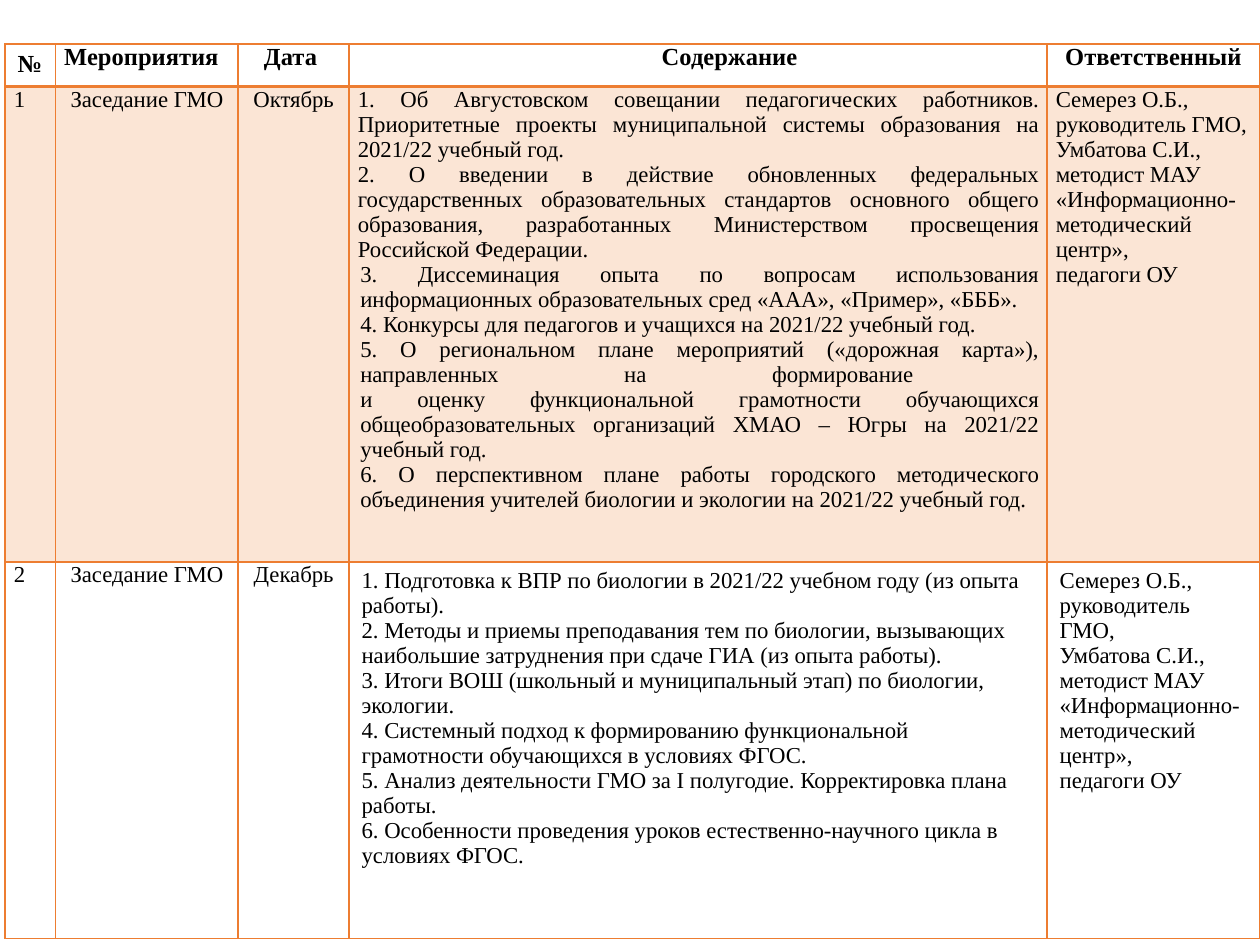
from copy import deepcopy
from dataclasses import dataclass

from pptx import Presentation
from pptx import util as u
from pptx.dml import color
from pptx.enum import text
from pptx.oxml import ns
from lxml import etree

LEFT, CENTER, JUSTIFY = text.PP_ALIGN.LEFT, text.PP_ALIGN.CENTER, text.PP_ALIGN.JUSTIFY


@dataclass(frozen=True)
class Theme:
    font: str = "Times New Roman"
    ink: str = "000000"
    accent: str = "ED7D31"
    band_alpha: int = 20
    heading_size: int = 14
    body_size: int = 13
    thin: int = 1
    thick: int = 2


def write(paragraph, words, size, theme, bold=False, align=LEFT, margin=0):
    """Fill a paragraph; a newline in the words is a line break."""
    paragraph.text = words
    paragraph.alignment = align
    paragraph._p.get_or_add_pPr().set("marL", str(u.Inches(margin)))
    for run in paragraph.runs:
        run.font.name, run.font.size, run.font.bold = theme.font, u.Pt(size), bold
        run.font.color.rgb = color.RGBColor.from_string(theme.ink)
    for line_break in paragraph._p.findall(ns.qn("a:br")):
        line_break.insert(0, deepcopy(paragraph.runs[0]._r.rPr))


class PlanSlide:
    COLUMNS, ROWS = 1000, 750  # fine grid over the slide

    def __init__(self, deck, theme):
        self.theme = theme
        self.column = deck.slide_width // self.COLUMNS
        self.row = deck.slide_height // self.ROWS
        self.slide = deck.slides.add_slide(deck.slide_layouts[6])

    def table(self, left, top, widths, heights):
        frame = self.slide.shapes.add_table(
            len(heights), len(widths), left * self.column, top * self.row,
            sum(widths) * self.column, sum(heights) * self.row)
        grid = frame.table
        grid.first_row = grid.horz_banding = False
        for column, width in zip(grid.columns, widths):
            column.width = width * self.column
        for row, height in zip(grid.rows, heights):
            row.height = height * self.row
        return grid

    def cell(self, cell, paragraphs, size, tight=True, banded=False,
             bottom=None, margins=(), **style):
        if tight:
            cell.margin_left = cell.margin_right = u.Inches(0.07)
            cell.margin_top = cell.margin_bottom = 0
        for index, words in enumerate(paragraphs):
            frame = cell.text_frame
            paragraph = frame.add_paragraph() if index else frame.paragraphs[0]
            margin = margins[index] if margins else 0
            write(paragraph, words, size, self.theme, margin=margin, **style)
        self.fill(cell, banded)
        self.borders(cell, bottom or self.theme.thin)

    def fill(self, cell, banded):
        if not banded:
            cell.fill.background()
            return
        cell.fill.solid()
        cell.fill.fore_color.rgb = color.RGBColor.from_string(self.theme.accent)
        tint = cell._tc.tcPr.find(".//" + ns.qn("a:srgbClr"))
        etree.SubElement(tint, ns.qn("a:alpha"), val=str(self.theme.band_alpha * 1000))

    def borders(self, cell, bottom):
        thin = self.theme.thin
        edges = {"lnL": thin, "lnR": thin, "lnT": thin, "lnB": bottom}
        for index, (edge, width) in enumerate(edges.items()):
            line = etree.Element(ns.qn(f"a:{edge}"), w=str(u.Pt(width)))
            solid = etree.SubElement(line, ns.qn("a:solidFill"))
            etree.SubElement(solid, ns.qn("a:srgbClr"), val=self.theme.accent)
            cell._tc.tcPr.insert(index, line)


# Content
HEADINGS = ["№", "Мероприятия", "Дата ", "Содержание", "Ответственный"]
EVENT = "Заседание ГМО"
PEOPLE = [
    "Семерез О.Б., руководитель ГМО,",
    "Умбатова С.И., методист МАУ «Информационно-методический центр»,",
    "педагоги ОУ",
]
OCTOBER = [
    "1. Об Августовском совещании педагогических работников. Приоритетные проекты "
    "муниципальной системы образования на 2021/22 учебный год.",
    "2. О введении в действие обновленных федеральных государственных образовательных "
    "стандартов основного общего образования, разработанных Министерством просвещения "
    "Российской Федерации.",
    "3. Диссеминация опыта по вопросам использования информационных образовательных "
    "сред «ААА», «Пример», «БББ».",
    "4. Конкурсы для педагогов и учащихся на 2021/22 учебный год.",
    "5. О региональном плане мероприятий («дорожная карта»), направленных на "
    "формирование \nи оценку функциональной грамотности обучающихся "
    "общеобразовательных организаций ХМАО – Югры на 2021/22 учебный год. ",
    "6. О перспективном плане работы городского методического объединения учителей "
    "биологии и экологии на 2021/22 учебный год.",
]
DECEMBER = [
    "1. Подготовка к ВПР по биологии в 2021/22 учебном году (из опыта работы).",
    "2. Методы и приемы преподавания тем по биологии, вызывающих наибольшие "
    "затруднения при сдаче ГИА (из опыта работы).",
    "3. Итоги ВОШ (школьный и муниципальный этап) по биологии, экологии.",
    "4. Системный подход к формированию функциональной грамотности обучающихся "
    "в условиях ФГОС.",
    "5. Анализ деятельности ГМО за I полугодие. Корректировка плана работы.",
    "6. Особенности проведения уроков естественно-научного цикла в условиях ФГОС.",
]
MEETINGS = [("Октябрь", OCTOBER), ("Декабрь", DECEMBER)]


def main():
    deck = Presentation()
    deck.slide_width, deck.slide_height = u.Inches(10), u.Inches(7.5)
    theme = Theme()
    page = PlanSlide(deck, theme)
    plan = page.table(4, 35, widths=[40, 145, 88, 554, 169], heights=[34, 377, 299])

    # Heading row
    for index, heading in enumerate(HEADINGS):
        page.cell(plan.cell(0, index), [heading], theme.heading_size, bold=True,
                  tight=index > 0, bottom=theme.thick,
                  align=CENTER if index > 1 else LEFT,
                  margins=[0.5 if heading == "Содержание" else 0])

    # One row for each meeting; the first is tinted and justified
    for number, (month, agenda) in enumerate(MEETINGS, start=1):
        first = number == 1
        contents = [[str(number)], [EVENT], [month], agenda, PEOPLE]
        aligns = [LEFT, CENTER, CENTER, JUSTIFY if first else LEFT, LEFT]
        for index, (paragraphs, align) in enumerate(zip(contents, aligns)):
            hanging = first and paragraphs is agenda
            page.cell(plan.cell(number, index), paragraphs, theme.body_size,
                      tight=first or index < 3, banded=first, align=align,
                      margins=[0, 0] + [0.02] * 4 if hanging else ())

    deck.save("out.pptx")


if __name__ == "__main__":
    main()
